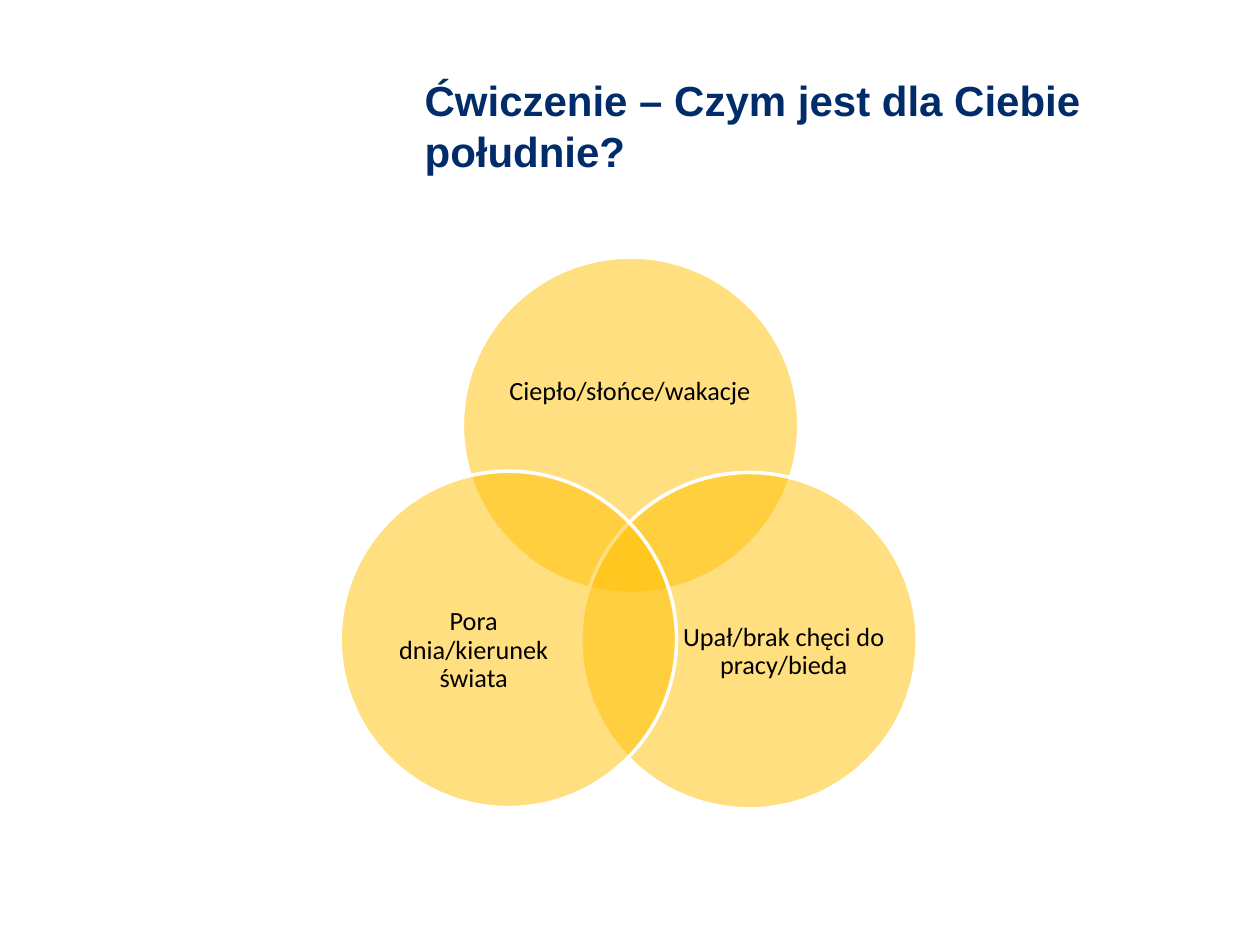
from typing import NamedTuple

from lxml.etree import SubElement
from pptx import Presentation
from pptx.dml.color import RGBColor
from pptx.enum.shapes import MSO_SHAPE
from pptx.enum.text import MSO_ANCHOR, MSO_AUTO_SIZE, PP_ALIGN
from pptx.oxml.ns import qn
from pptx.shapes.shapetree import GroupShapes
from pptx.slide import Slide
from pptx.util import Inches, Pt

COLORS = {"title": "002D69", "circle": "FFC000", "outline": "FFFFFF", "label": "000000"}
DIAMETER = 2.67


class Area(NamedTuple):
    left: float
    top: float
    width: float
    height: float

    def lengths(self) -> list[Inches]:
        return [Inches(value) for value in self]


class VennSet(NamedTuple):
    text: str
    circle: Area
    label: Area


VENN_SETS = [
    VennSet("Ciepło/słońce/wakacje",
            Area(3.67, 2.04, DIAMETER, DIAMETER), Area(4.02, 2.51, 1.96, 1.2)),
    VennSet("Upał/brak chęci do pracy/bieda",
            Area(4.61, 3.75, DIAMETER, DIAMETER), Area(5.42, 4.44, 1.6, 1.47)),
    VennSet("Pora dnia/kierunek świata",
            Area(2.7, 3.74, DIAMETER, DIAMETER), Area(2.96, 4.43, 1.6, 1.47)),
]


def color(name: str) -> RGBColor:
    return RGBColor.from_string(COLORS[name])


def add_title(page: Slide, text: str, area: Area) -> None:
    title = page.shapes.title
    title.left, title.top, title.width, title.height = area.lengths()
    frame = title.text_frame
    frame.text = text
    frame.auto_size = MSO_AUTO_SIZE.NONE
    frame.vertical_anchor = MSO_ANCHOR.MIDDLE
    para = frame.paragraphs[0]
    para.alignment = PP_ALIGN.LEFT
    para.font.name = "Arial"
    para.font.size = Pt(24)
    para.font.bold = True
    para.font.color.rgb = color("title")


def add_circle(shapes: GroupShapes, area: Area) -> None:
    circle = shapes.add_shape(MSO_SHAPE.OVAL, *area.lengths())
    circle.shadow.inherit = False
    circle.fill.solid()
    circle.fill.fore_color.rgb = color("circle")
    circle.line.color.rgb = color("outline")
    circle.line.width = Pt(2)
    # Half-transparent fill, so that the overlaps show
    fill_color = circle.fill._xPr.find(qn("a:solidFill"))[0]
    SubElement(fill_color, qn("a:alpha"), val="50000")


def add_label(shapes: GroupShapes, text: str, area: Area) -> None:
    box = shapes.add_textbox(*area.lengths())
    frame = box.text_frame
    frame.text = text
    frame.word_wrap = True
    frame.vertical_anchor = MSO_ANCHOR.MIDDLE
    frame.margin_left = frame.margin_right = frame.margin_top = frame.margin_bottom = 0
    para = frame.paragraphs[0]
    para.alignment = PP_ALIGN.CENTER
    para.line_spacing = 0.9
    para.font.name = "Calibri"
    para.font.size = Pt(15)
    para.font.color.rgb = color("label")


def main() -> None:
    deck = Presentation()
    deck.slide_width, deck.slide_height = Inches(10), Inches(7.5)
    page = deck.slides.add_slide(deck.slide_layouts[5])

    add_title(page, "Ćwiczenie – Czym jest dla Ciebie południe?", Area(3.27, 0.44, 6.73, 1.11))

    # Venn diagram
    diagram = page.shapes.add_group_shape()
    for venn_set in VENN_SETS:
        add_circle(diagram.shapes, venn_set.circle)
        add_label(diagram.shapes, venn_set.text, venn_set.label)

    deck.save("out.pptx")


if __name__ == "__main__":
    main()
